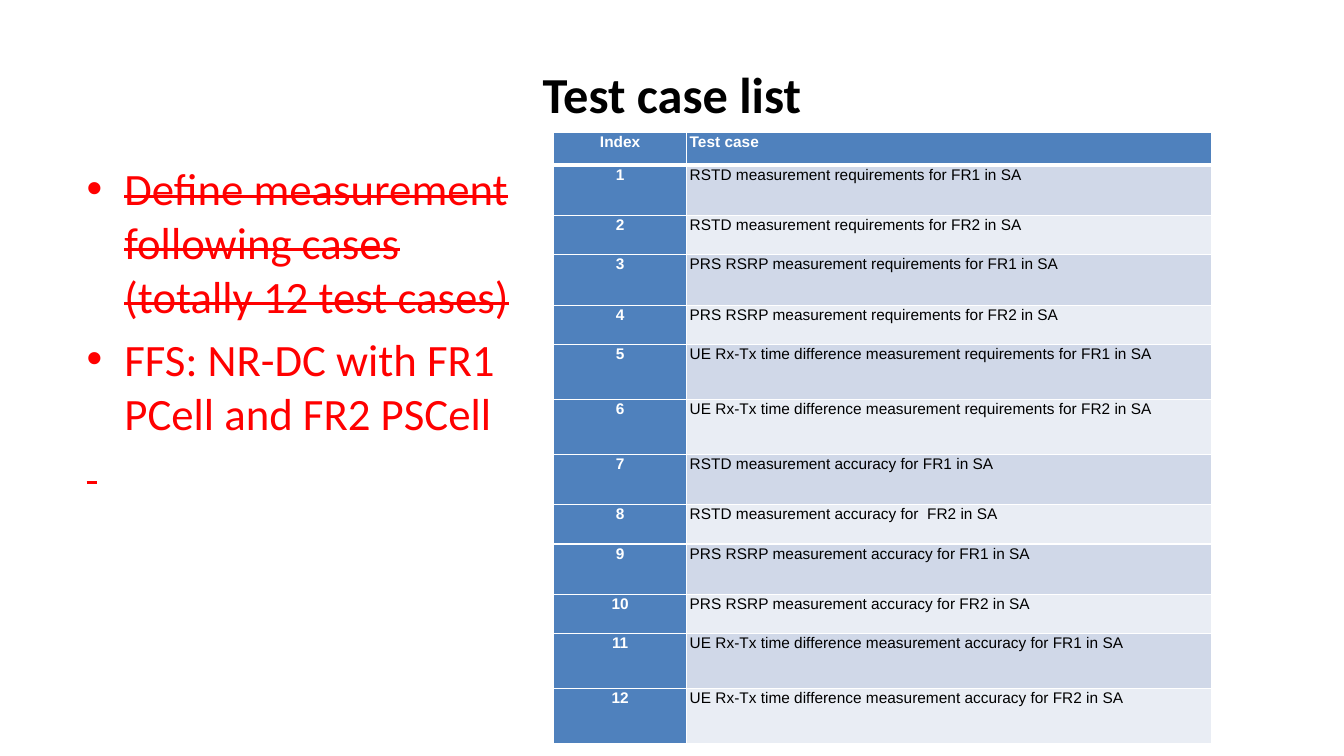
from lxml import etree
from pptx import Presentation
from pptx.dml.color import RGBColor
from pptx.enum import text
from pptx.oxml import ns
from pptx.util import Pt

BLACK = RGBColor(0x00, 0x00, 0x00)
WHITE = RGBColor(0xFF, 0xFF, 0xFF)
RED = RGBColor(0xFF, 0x00, 0x00)
BLUE = RGBColor(0x4F, 0x81, 0xBD)
BANDS = [RGBColor(0xD0, 0xD8, 0xE8), RGBColor(0xE9, 0xED, 0xF4)]

# Wording, bulleted, struck through
SCOPE = [
    ("Define measurement following cases (totally 12 test cases)", True, True),
    ("FFS: NR-DC with FR1 PCell and FR2 PSCell", True, False),
    (" ", False, True),
]
HEADER = ("Index", "Test case")
TEST_CASES = [
    "RSTD measurement requirements for FR1 in SA",
    "RSTD measurement requirements for FR2 in SA",
    "PRS RSRP measurement requirements for FR1 in SA",
    "PRS RSRP measurement requirements for FR2 in SA",
    "UE Rx-Tx time difference measurement requirements for FR1 in SA",
    "UE Rx-Tx time difference measurement requirements for FR2 in SA",
    "RSTD measurement accuracy for FR1 in SA",
    "RSTD measurement accuracy for  FR2 in SA",
    "PRS RSRP measurement accuracy for FR1 in SA",
    "PRS RSRP measurement accuracy for FR2 in SA",
    "UE Rx-Tx time difference measurement accuracy for FR1 in SA",
    "UE Rx-Tx time difference measurement accuracy for FR2 in SA",
]
HEADER_HEIGHT = 23.5
CASE_HEIGHTS = [36, 28, 36, 28, 39.3, 39.3] * 2
INDEX_WIDTH = 95


def style_font(font, name, size, color, bold=False):
    font.name = name
    font.size = Pt(size)
    font.color.rgb = color
    font.bold = bold


def add_text_frame(slide, box):
    text_frame = slide.shapes.add_textbox(*map(Pt, box)).text_frame
    text_frame.word_wrap = True
    return text_frame


def add_title(slide, box):
    text_frame = add_text_frame(slide, box)
    text_frame.vertical_anchor = text.MSO_ANCHOR.MIDDLE
    text_frame.text = "Test case list"
    paragraph = text_frame.paragraphs[0]
    paragraph.alignment = text.PP_ALIGN.CENTER
    style_font(paragraph.runs[0].font, "Calibri", 36, BLACK, bold=True)


def add_scope(slide, box):
    text_frame = add_text_frame(slide, box)
    text_frame.text = "\n".join(wording for wording, _, _ in SCOPE)
    for paragraph, (_, bulleted, struck) in zip(text_frame.paragraphs, SCOPE):
        paragraph.space_before = Pt(6.4)
        run = paragraph.runs[0]
        style_font(run.font, "Calibri", 32, RED)
        if struck:
            run._r.get_or_add_rPr().set("strike", "sngStrike")
        if bulleted:
            properties = paragraph._p.get_or_add_pPr()
            properties.set("marL", str(Pt(27)))
            properties.set("indent", str(Pt(-27)))
            font = etree.SubElement(properties, ns.qn("a:buFont"))
            font.set("typeface", "Arial")
            etree.SubElement(properties, ns.qn("a:buChar")).set("char", "•")


def set_borders(cell, widths):
    """Draw white borders; widths are left, right, top, bottom."""
    properties = cell._tc.get_or_add_tcPr()
    for position, (side, width) in enumerate(zip("LRTB", widths)):
        line = etree.Element(ns.qn(f"a:ln{side}"), w=str(Pt(width)))
        fill = etree.SubElement(line, ns.qn("a:solidFill"))
        etree.SubElement(fill, ns.qn("a:srgbClr")).set("val", str(WHITE))
        properties.insert(position, line)


def fill_cell(cell, wording, fill, color, bold, centred):
    cell.margin_left = cell.margin_right = Pt(2.2)
    cell.margin_top = cell.margin_bottom = 0
    cell.fill.solid()
    cell.fill.fore_color.rgb = fill
    cell.text_frame.text = wording
    paragraph = cell.text_frame.paragraphs[0]
    paragraph.line_spacing = 1.07
    paragraph.space_after = Pt(9)
    paragraph.alignment = text.PP_ALIGN.CENTER if centred else text.PP_ALIGN.LEFT
    style_font(paragraph.runs[0].font, "Arial", 11, color, bold)


def add_case_table(slide, left, top, width):
    heights = [HEADER_HEIGHT] + CASE_HEIGHTS
    rows = [HEADER] + [(str(i), case) for i, case in enumerate(TEST_CASES, 1)]
    table = slide.shapes.add_table(
        len(rows), 2, Pt(left), Pt(top), Pt(width), Pt(sum(heights))).table
    table.columns[0].width = Pt(INDEX_WIDTH)
    table.columns[1].width = Pt(width - INDEX_WIDTH)
    for i, (row, height) in enumerate(zip(rows, heights)):
        table.rows[i].height = Pt(height)
        for j, wording in enumerate(row):
            cell = table.cell(i, j)
            heading = i == 0 or j == 0
            fill_cell(cell, wording,
                      fill=BLUE if heading else BANDS[(i - 1) % 2],
                      color=WHITE if heading else BLACK,
                      bold=heading, centred=j == 0)
            # The rule under the header is thicker
            set_borders(cell, (1, 1, 3 if i == 1 else 1, 3 if i == 0 else 1))


def main():
    presentation = Presentation()
    presentation.slide_width = Pt(960)
    presentation.slide_height = Pt(540)
    slide = presentation.slides.add_slide(presentation.slide_layouts[6])
    add_title(slide, (48, 21.6, 864, 90))
    add_scope(slide, (54.8, 111.6, 329, 371))
    add_case_table(slide, 395.5, 94.5, 470)
    presentation.save("out.pptx")


if __name__ == "__main__":
    main()
